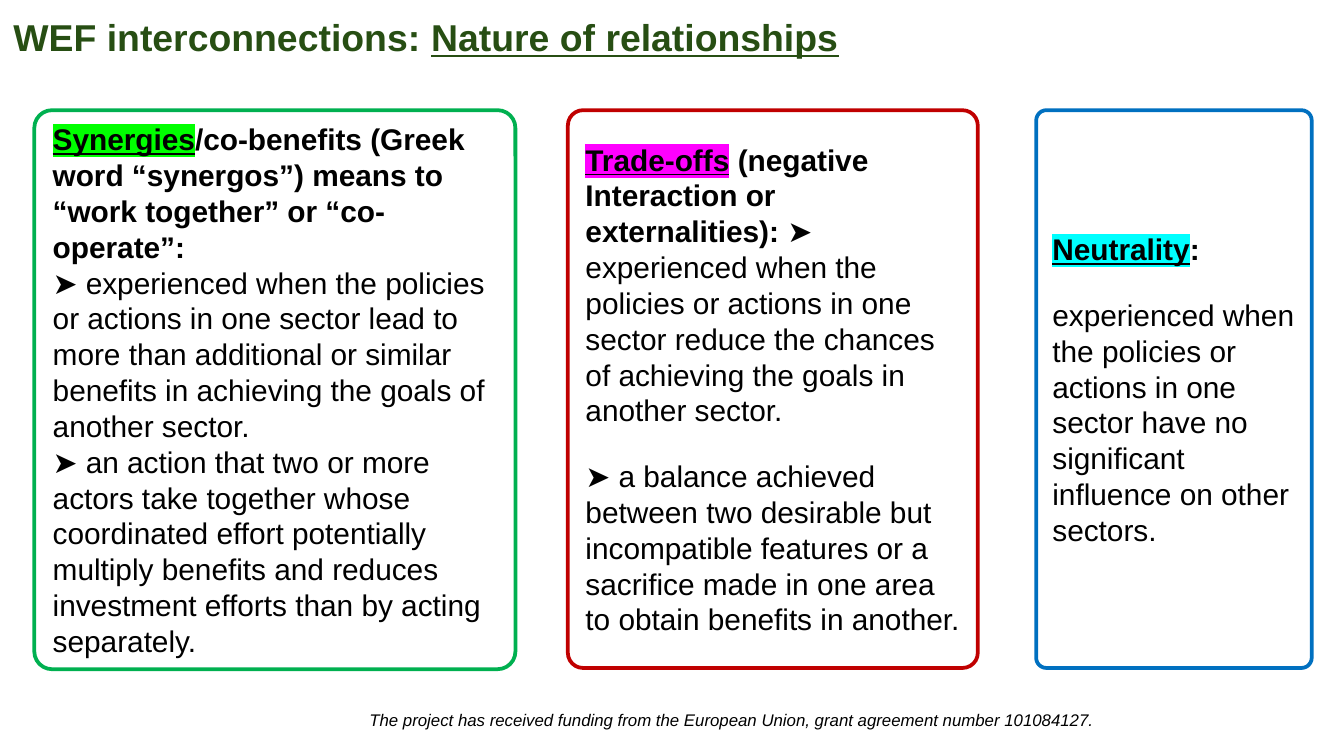
from dataclasses import dataclass

import pptx
import pptx.dml.color
import pptx.enum.shapes
import pptx.enum.text
import pptx.oxml
import pptx.oxml.ns
import pptx.util

PX = 4572


@dataclass(frozen=True)
class Theme:
    font: str = "Arial"
    title: str = "274E13"
    text: str = "000000"
    synergy: str = "00B050"
    synergy_mark: str = "00FF00"
    tradeoff: str = "C00000"
    tradeoff_mark: str = "FF00FF"
    neutral: str = "0070C0"
    neutral_mark: str = "00FFFF"
    title_size: int = 20
    body_size: int = 16
    footer_size: int = 9
    outline: int = 2


T = Theme()


def rgb(value):
    return pptx.dml.color.RGBColor.from_string(value)


def emu(box):
    return [pptx.util.Emu(v * PX) for v in box]


def set_margins(tf, inset):
    tf.margin_left = tf.margin_right = tf.margin_top = tf.margin_bottom = inset * PX


def style_paragraph(p, size, color):
    p.alignment = pptx.enum.text.PP_ALIGN.LEFT
    p.font.name = T.font
    p.font.size = pptx.util.Pt(size)
    p.font.color.rgb = rgb(color)


def add_run(p, text, bold=False, underline=False, mark=None):
    r = p.add_run()
    r.text = text
    r.font.bold = bold
    r.font.underline = underline
    if mark:
        ns = pptx.oxml.ns.nsdecls("a")
        r.font._element.append(pptx.oxml.parse_xml(
            f'<a:highlight {ns}><a:srgbClr val="{mark}"/></a:highlight>'))


def add_title(s, box, lead, topic):
    sp = s.shapes.title
    sp.left, sp.top, sp.width, sp.height = emu(box)
    tf = sp.text_frame
    tf.word_wrap = True
    tf.auto_size = pptx.enum.text.MSO_AUTO_SIZE.NONE
    tf.vertical_anchor = pptx.enum.text.MSO_ANCHOR.TOP
    set_margins(tf, 20)
    p = tf.paragraphs[0]
    style_paragraph(p, T.title_size, T.title)
    add_run(p, lead, bold=True)
    add_run(p, topic, bold=True, underline=True)


def add_footer(s, box, text):
    tf = s.shapes.add_textbox(*emu(box)).text_frame
    tf.word_wrap = True
    set_margins(tf, 20)
    p = tf.paragraphs[0]
    p.line_spacing = 1.08
    p.space_after = pptx.util.Pt(8)
    style_paragraph(p, T.footer_size, T.text)
    p.font.italic = True
    p.add_run().text = text


def add_card(s, box, color, mark, term, paragraphs, gap):
    sp = s.shapes.add_shape(pptx.enum.shapes.MSO_SHAPE.ROUNDED_RECTANGLE, *emu(box))
    sp.adjustments[0] = 0.037
    sp.shadow.inherit = False
    sp.fill.background()
    sp.line.color.rgb = rgb(color)
    sp.line.width = pptx.util.Pt(T.outline)
    tf = sp.text_frame
    tf.word_wrap = True
    tf.vertical_anchor = pptx.enum.text.MSO_ANCHOR.MIDDLE
    for i, (heading, body) in enumerate(paragraphs):
        p = tf.add_paragraph() if i else tf.paragraphs[0]
        p.space_after = pptx.util.Pt(gap)
        style_paragraph(p, T.body_size, T.text)
        if i == 0:
            add_run(p, term, bold=True, underline=True, mark=mark)
        if heading:
            add_run(p, heading, bold=True)
        if body:
            add_run(p, body)


def main():
    prs = pptx.Presentation()
    prs.slide_width, prs.slide_height = emu((2000, 1125))
    s = prs.slides.add_slide(prs.slide_layouts[5])
    add_footer(s, (530, 1038, 1226, 70),
               "The project has received funding from the European Union, "
               "grant agreement number 101084127.")
    add_title(s, (0, 1, 1378, 100), "WEF interconnections: ", "Nature of relationships")
    add_card(s, (51, 164, 716, 832), T.synergy, T.synergy_mark, "Synergies", [
        ("/co-benefits (Greek word “synergos”) means to “work together” or “co-operate”:", ""),
        ("", "➤ experienced when the policies or actions in one sector lead to more than "
             "additional or similar benefits in achieving the goals of another sector."),
        ("", "➤ an action that two or more actors take together whose coordinated effort "
             "potentially multiply benefits and reduces investment efforts than by acting "
             "separately."),
    ], 0)
    add_card(s, (845, 164, 610, 830), T.tradeoff, T.tradeoff_mark, "Trade-offs", [
        (" (negative Interaction or externalities):",
         " ➤ experienced when the policies or actions in one sector reduce the chances "
         "of achieving the goals in another sector."),
        ("", "➤ a balance achieved between two desirable but incompatible features or a "
             "sacrifice made in one area to obtain benefits in another."),
    ], 16)
    add_card(s, (1542, 164, 410, 830), T.neutral, T.neutral_mark, "Neutrality", [
        (":", ""),
        ("", "experienced when the policies or actions in one sector have no significant "
             "influence on other sectors."),
    ], 16)
    prs.save("out.pptx")


if __name__ == "__main__":
    main()
